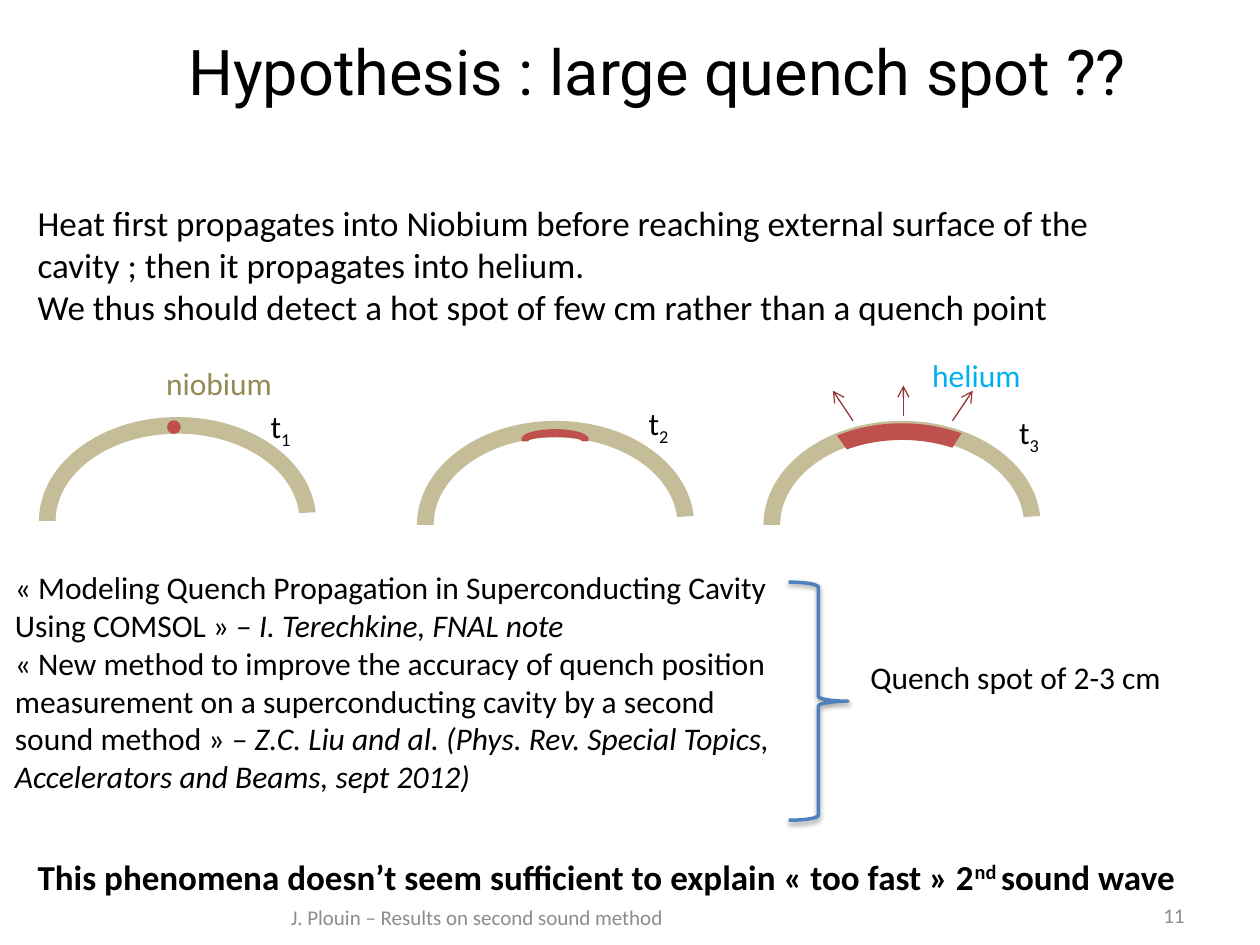
from dataclasses import dataclass, field
from typing import Optional

import lxml.etree
import pptx
import pptx.dml.color
import pptx.enum.shapes
import pptx.enum.text
import pptx.oxml
import pptx.oxml.ns
import pptx.util

Inches = pptx.util.Inches
Pt = pptx.util.Pt
Shape = pptx.enum.shapes.MSO_SHAPE
Align = pptx.enum.text.PP_ALIGN
Anchor = pptx.enum.text.MSO_ANCHOR
qn = pptx.oxml.ns.qn
Box = tuple[float, float, float, float]


@dataclass(frozen=True)
class Theme:
    font: str = "Calibri"
    title_font: str = "Roboto"
    title_size: int = 36
    body_size: int = 20
    label_size: int = 18
    footer_size: int = 12
    ink: str = "000000"
    footer: str = "8C8C8C"
    niobium: str = "C4BD97"
    niobium_label: str = "948A54"
    helium_label: str = "00B0F0"
    hot: str = "C0504D"
    heat_flow: str = "953735"
    brace: str = "4F81BD"


THEME = Theme()


@dataclass(frozen=True)
class Run:
    text: str
    italic: bool = False
    baseline: int = 0  # percent: above zero raises, below zero lowers


@dataclass(frozen=True)
class TextBlock:
    box: Box
    paragraphs: list[list[Run]]
    size: int = THEME.label_size
    color: str = THEME.ink
    font: str = THEME.font
    bold: bool = False
    layout: dict = field(default_factory=dict)
    align: Optional[Align] = None


@dataclass(frozen=True)
class Stage:
    """One moment of the heat propagation: wall position and time label position."""
    wall_left: float
    wall_top: float
    label_left: float
    label_top: float


@dataclass(frozen=True)
class Figure:
    kind: Shape
    box: Box
    fill: Optional[str] = None
    line: Optional[str] = None
    adjustments: tuple[float, ...] = ()


WALL_SIZE = (2.2, 1.65)
WALL_ARC = (108, 213.81, 0.08)
HOT_ARC = (140.78, 181.39, 0.08)
LINE_WIDTH = 2
ARROW_WIDTH = 0.75

STAGES = [
    Stage(0.31, 3.31, 2.05, 3.18),
    Stage(3.31, 3.34, 5.05, 3.16),
    Stage(6.06, 3.34, 7.99, 3.23),
]
HOT_SPOTS = [
    Figure(Shape.OVAL, (1.34, 3.35, 0.08, 0.08), THEME.hot, THEME.hot),
    Figure(Shape.BLOCK_ARC, (4.15, 3.42, 0.51, 0.14), THEME.hot, THEME.hot),
    Figure(Shape.BLOCK_ARC, (6.06, 3.36, *WALL_SIZE), THEME.hot, None, HOT_ARC),
]
HEAT_ARROWS = [
    ((6.77, 3.34), (6.61, 3.1)),
    ((7.17, 3.3), (7.17, 3.06)),
    ((7.56, 3.34), (7.72, 3.1)),
]
BRACE = Figure(Shape.RIGHT_BRACE, (6.26, 4.62, 0.47, 1.89), None, THEME.brace)

MIDDLE = {"vertical_anchor": Anchor.MIDDLE}
TEXTS = [
    TextBlock((1.14, 0.13, 8.15, 0.85), [[Run("Hypothesis : large quench spot ??")]],
              THEME.title_size, font=THEME.title_font, layout=MIDDLE, align=Align.CENTER),
    TextBlock((0.2, 1.55, 8.99, 1.11), [
        [Run("Heat first propagates into Niobium before reaching external surface of the "
             "cavity ; then it propagates into helium.")],
        [Run("We thus should detect a hot spot of few cm rather than a quench point")],
    ], THEME.body_size),
    TextBlock((1.22, 2.84, 1.26, 0.42), [[Run("niobium")]], color=THEME.niobium_label),
    TextBlock((7.3, 2.78, 1.42, 0.4), [[Run("helium")]], color=THEME.helium_label),
    TextBlock((0.02, 4.46, 6.22, 1.92), [
        [Run("« Modeling Quench Propagation in Superconducting Cavity Using COMSOL » – "),
         Run("I. Terechkine, FNAL note", italic=True)],
        [Run("« New method to improve the accuracy of quench position measurement on a "
             "superconducting cavity by a second sound method » "),
         Run("– Z.C. Liu and al. (Phys. Rev. Special Topics, Accelerators and Beams, "
             "sept 2012)", italic=True)],
    ]),
    TextBlock((6.81, 5.17, 2.76, 0.4), [[Run("Quench spot of 2-3 cm")]]),
    TextBlock((0.2, 6.74, 9.29, 0.44), [
        [Run("This phenomena doesn’t seem sufficient to explain « too fast » 2"),
         Run("nd ", baseline=30), Run("sound wave")],
    ], THEME.body_size, bold=True),
    TextBlock((0.98, 7.06, 5.61, 0.44), [[Run("J. Plouin – Results on second sound method")]],
              THEME.footer_size, THEME.footer, layout=MIDDLE, align=Align.CENTER),
    TextBlock((7.17, 7.06, 2.33, 0.4), [[Run("11")]],
              THEME.footer_size, THEME.footer, layout=MIDDLE, align=Align.RIGHT),
]


def rgb(value: str) -> pptx.dml.color.RGBColor:
    return pptx.dml.color.RGBColor.from_string(value)


def set_all(target, values: dict) -> None:
    for name, value in values.items():
        setattr(target, name, value)


def add_text(slide, block: TextBlock) -> None:
    frame = slide.shapes.add_textbox(*map(Inches, block.box)).text_frame
    set_all(frame, {"word_wrap": True, **block.layout})
    for index, runs in enumerate(block.paragraphs):
        paragraph = frame.add_paragraph() if index else frame.paragraphs[0]
        paragraph.alignment = block.align
        for part in runs:
            run = paragraph.add_run()
            run.text = part.text
            set_all(run.font, {"name": block.font, "size": Pt(block.size),
                               "bold": block.bold, "italic": part.italic})
            run.font.color.rgb = rgb(block.color)
            if part.baseline:
                run.font._element.set("baseline", str(part.baseline * 1000))


def add_figure(slide, figure: Figure):
    shape = slide.shapes.add_shape(figure.kind, *map(Inches, figure.box))
    shape.shadow.inherit = False
    for index, value in enumerate(figure.adjustments):
        shape.adjustments[index] = value
    if figure.fill:
        shape.fill.solid()
        shape.fill.fore_color.rgb = rgb(figure.fill)
    else:
        shape.fill.background()
    if figure.line:
        shape.line.color.rgb = rgb(figure.line)
        shape.line.width = Pt(LINE_WIDTH)
    else:
        shape.line.fill.background()
    return shape


def add_soft_shadow(shape) -> None:
    effects = shape._element.spPr.find(qn("a:effectLst"))
    shadow = lxml.etree.SubElement(effects, qn("a:outerShdw"), blurRad=str(Pt(3.1)),
                                   dist=str(Pt(1.6)), dir="5400000", rotWithShape="0")
    color = lxml.etree.SubElement(shadow, qn("a:srgbClr"), val=THEME.ink)
    lxml.etree.SubElement(color, qn("a:alpha"), val="38000")


def add_heat_arrow(slide, start: tuple[float, float], end: tuple[float, float]) -> None:
    arrow = slide.shapes.add_connector(pptx.enum.shapes.MSO_CONNECTOR.STRAIGHT,
                                       *map(Inches, (*start, *end)))
    arrow.line.color.rgb = rgb(THEME.heat_flow)
    arrow.line.width = Pt(ARROW_WIDTH)
    lxml.etree.SubElement(arrow.line._get_or_add_ln(), qn("a:tailEnd"), type="arrow")
    lxml.etree.SubElement(arrow._element.spPr, qn("a:effectLst"))


def main() -> None:
    deck = pptx.Presentation()
    set_all(deck, {"slide_width": Inches(10), "slide_height": Inches(7.5)})
    slide = deck.slides.add_slide(deck.slide_layouts[6])
    for number, (stage, hot_spot) in enumerate(zip(STAGES, HOT_SPOTS), start=1):
        add_figure(slide, Figure(Shape.BLOCK_ARC, (stage.wall_left, stage.wall_top, *WALL_SIZE),
                                 THEME.niobium, None, WALL_ARC))
        add_figure(slide, hot_spot)
        add_text(slide, TextBlock((stage.label_left, stage.label_top, 0.47, 0.4),
                                  [[Run("t"), Run(str(number), baseline=-25)]]))
    for start, end in HEAT_ARROWS:
        add_heat_arrow(slide, start, end)
    add_soft_shadow(add_figure(slide, BRACE))
    for block in TEXTS:
        add_text(slide, block)
    deck.save("out.pptx")


if __name__ == "__main__":
    main()
